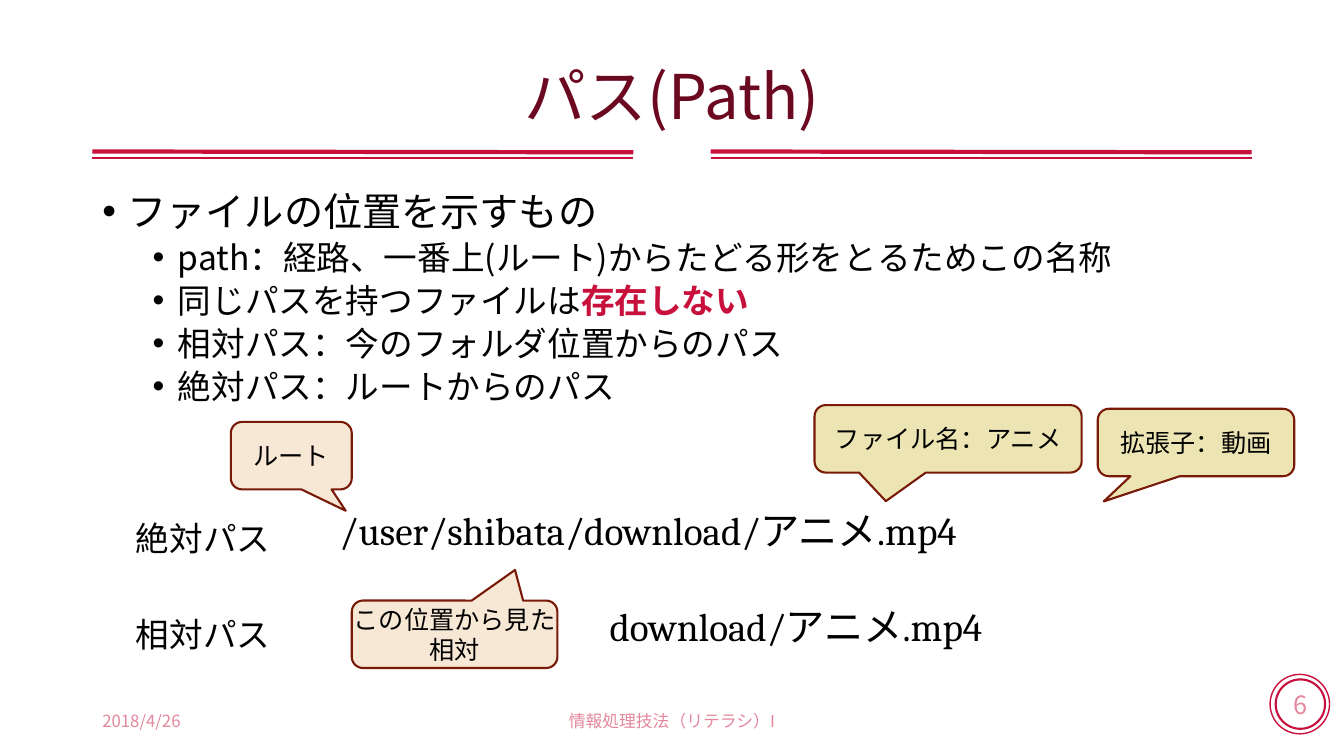
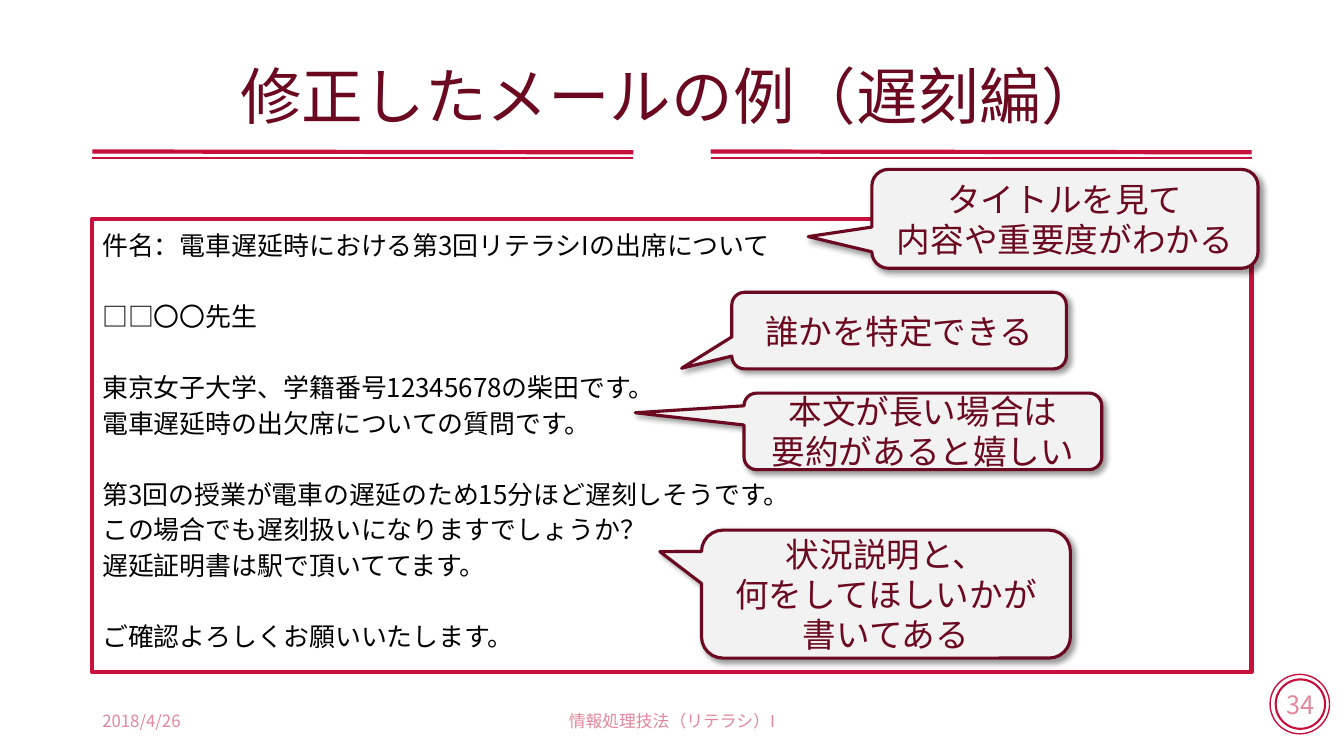
from collections import namedtuple

from lxml.etree import SubElement
from pptx import Presentation
from pptx.dml.color import RGBColor
from pptx.enum.shapes import MSO_CONNECTOR, MSO_SHAPE
from pptx.enum.text import MSO_ANCHOR, PP_ALIGN
from pptx.oxml.ns import qn
from pptx.util import Pt

CRIMSON = RGBColor(0xC8, 0x10, 0x3D)
WINE = RGBColor(0x6B, 0x09, 0x20)
BROWN = RGBColor(0x78, 0x1A, 0x07)
SAND = RGBColor(0xEC, 0xE5, 0xB3)
PEACH = RGBColor(0xF7, 0xE7, 0xD5)
PALE = RGBColor(0xF2, 0xF2, 0xF2)
BLACK = RGBColor(0, 0, 0)

SANS = "Noto Sans CJK JP"
SERIF = "Cambria"

Box = namedtuple("Box", "left top width height")
Style = namedtuple("Style", "size color font alpha", defaults=(SANS, None))
CalloutStyle = namedtuple("CalloutStyle", "fill line weight text wrap shadow")

TITLE_STYLE = Style(44, WINE)
FOOTER_STYLE = Style(12, CRIMSON, alpha=50)
NUMBER_STYLE = Style(18, CRIMSON, alpha=50)
LABEL_STYLE = Style(24, BLACK)
PATH_STYLE = Style(28, BLACK, SERIF)
MAIL_STYLE = Style(18.5, BLACK)
NOTE_TEXT = Style(18, BLACK, SERIF)

FILE_NOTE = CalloutStyle(SAND, BROWN, 1.5, NOTE_TEXT, False, False)
FOLDER_NOTE = CalloutStyle(PEACH, BROWN, 1.5, NOTE_TEXT, False, False)
MAIL_NOTE = CalloutStyle(PALE, WINE, 2.25, Style(24, WINE), True, True)

PAGE = Box(0, 0, 960, 540)
CONTENT = Box(66, 132, 828, 355)
LEADING = 1.19


def points(box):
    return [Pt(value) for value in box]


def inside(region, left, top, width, height):
    """Turn a box measured from the region's corner into a page box."""
    return Box(region.left + left, region.top + top, width, height)


def add_run(para, text, style, bold=False):
    span = para.add_run()
    span.text = text
    font = span.font
    font.size, font.name, font.bold = Pt(style.size), style.font, bold
    font.color.rgb = style.color
    properties = span.font._element
    east_asian = SubElement(properties, qn("a:ea"))
    east_asian.set("typeface", SANS)
    if style.alpha:
        color = properties.find(".//" + qn("a:srgbClr"))
        SubElement(color, qn("a:alpha")).set("val", str(style.alpha * 1000))


def paragraphs(frame, count):
    return [frame.paragraphs[0]] + [frame.add_paragraph() for _ in range(count - 1)]


def write_lines(frame, lines, style, align=PP_ALIGN.LEFT, wrap=True):
    frame.word_wrap = wrap
    frame.vertical_anchor = MSO_ANCHOR.MIDDLE
    for para, line in zip(paragraphs(frame, len(lines)), lines):
        para.alignment = align
        if len(lines) > 1:
            para.line_spacing = Pt(round(style.size * LEADING, 1))
        add_run(para, line, style)


def add_label(page, box, text, style, align=PP_ALIGN.LEFT):
    label = page.shapes.add_textbox(*points(box))
    write_lines(label.text_frame, [text], style, align)
    return label


def add_panel(page, kind, box, line, weight, fill=None):
    panel = page.shapes.add_shape(kind, *points(box))
    panel.shadow.inherit = False
    if fill is None:
        panel.fill.background()
    else:
        panel.fill.solid()
        panel.fill.fore_color.rgb = fill
    panel.line.color.rgb = line
    panel.line.width = Pt(weight)
    return panel


def add_shadow(shape):
    effects = shape._element.spPr.find(qn("a:effectLst"))
    shadow = SubElement(effects, qn("a:outerShdw"))
    for name, value in (("blurRad", Pt(4)), ("dist", Pt(3)), ("dir", 45 * 60000)):
        shadow.set(name, str(int(value)))
    shadow.set("algn", "tl")
    shadow.set("rotWithShape", "0")
    color = SubElement(shadow, qn("a:srgbClr"))
    color.set("val", str(BLACK))
    SubElement(color, qn("a:alpha")).set("val", "40000")


def add_callout(page, box, lines, tip, look):
    """Add a speech bubble; tip is its point as shares of the size from the centre."""
    bubble = add_panel(page, MSO_SHAPE.ROUNDED_RECTANGULAR_CALLOUT, box,
                       look.line, look.weight, look.fill)
    for index, value in enumerate((*tip, 0.167)):
        bubble.adjustments[index] = value
    if look.shadow:
        add_shadow(bubble)
    write_lines(bubble.text_frame, lines, look.text, PP_ALIGN.CENTER, look.wrap)


def add_rule(page, left, top, width, drop, weight):
    rule = page.shapes.add_connector(
        MSO_CONNECTOR.STRAIGHT, Pt(left), Pt(top), Pt(left + width), Pt(top + drop))
    rule.line.color.rgb = CRIMSON
    rule.line.width = Pt(weight)
    SubElement(rule._element.spPr, qn("a:effectLst"))


def add_title(page, box, text):
    width = 386.4
    for left in (box.left, box.left + box.width - width):
        add_rule(page, left, box.top + 79.4, width, 0.6, 3)
        add_rule(page, left, box.top + 84.2, width, 0, 1)
    title = add_label(page, box, text, TITLE_STYLE, PP_ALIGN.CENTER)
    title.text_frame.paragraphs[0].line_spacing = 0.9


def add_footer(page, box, number):
    add_label(page, inside(box, 0, 18.7, 216, 28.8), "2018/4/26", FOOTER_STYLE)
    add_label(page, inside(box, 252, 18.7, 324, 28.8), "情報処理技法（リテラシ）I",
              FOOTER_STYLE, PP_ALIGN.CENTER)
    add_panel(page, MSO_SHAPE.OVAL, inside(box, 841.2, 0, 42.5, 42.5), CRIMSON, 1)
    badge = add_panel(page, MSO_SHAPE.OVAL, inside(box, 845.2, 3.6, 35.3, 35.3),
                      CRIMSON, 1.5)
    write_lines(badge.text_frame, [str(number)], NUMBER_STYLE, PP_ALIGN.CENTER, False)


def add_page(deck, title, number):
    page = deck.slides.add_slide(deck.slide_layouts[6])
    add_title(page, Box(66, 28.8, 828, 84.2), title)
    add_footer(page, Box(66, 481.7, 894, 50), number)
    return page


def add_bullets(page, box, items):
    """Add bullets from (level, spans) pairs, each span being (text, stressed)."""
    frame = page.shapes.add_textbox(*points(box)).text_frame
    frame.word_wrap = True
    for index, (para, (level, spans)) in enumerate(
            zip(paragraphs(frame, len(items)), items)):
        size, margin, leading = ((28, 18, 32), (24, 54, 25.7))[level]
        para.level = level
        properties = para._p.get_or_add_pPr()
        properties.set("marL", str(Pt(margin)))
        properties.set("indent", str(-Pt(18)))
        SubElement(properties, qn("a:buFont")).set("typeface", "Arial")
        SubElement(properties, qn("a:buChar")).set("char", "•")
        para.line_spacing = Pt(leading)
        if index:
            para.space_before = Pt(5)
        for text, stressed in spans:
            add_run(para, text, Style(size, CRIMSON if stressed else BLACK), stressed)


def add_path_diagram(page, box):
    for top, text in ((76.6, "絶対パス"), (145.7, "相対パス")):
        add_label(page, inside(box, 0, top, 120, 36), text, LABEL_STYLE)
    for left, top, width, text in (
            (145.4, 68.6, 499, "/user/shibata/download/アニメ.mp4"),
            (338.4, 137, 312, "download/アニメ.mp4")):
        add_label(page, inside(box, left, top, width, 41), text, PATH_STYLE)
    for left, top, width, lines, tip, look in (
            (491.8, 0, 190.8, ["ファイル名：アニメ"], (-0.233, 0.924), FILE_NOTE),
            (694.1, 2.6, 140.4, ["拡張子：動画"], (-0.469, 0.873), FILE_NOTE),
            (74.9, 12, 86.4, ["ルート"], (0.45, 0.817), FOLDER_NOTE),
            (161.3, 139.6, 146.9, ["この位置から見た", "相対"],
             (0.294, -0.954), FOLDER_NOTE)):
        add_callout(page, inside(box, left, top, width, 48.2), lines, tip, look)


def add_mail(page, box, blocks):
    """Add a framed mail whose blocks of lines stand one line apart."""
    frame = add_panel(page, MSO_SHAPE.RECTANGLE, box, CRIMSON, 3).text_frame
    lines = [(line, index == 0) for block in blocks for index, line in enumerate(block)]
    write_lines(frame, [line for line, _ in lines], MAIL_STYLE)
    leading, gap = 15.4, 10
    for index, (para, (_, opens_block)) in enumerate(zip(frame.paragraphs, lines)):
        para.line_spacing = Pt(leading)
        if index:
            para.space_before = Pt(gap + (leading + gap) * opens_block)


def add_mail_notes(page, box):
    for left, top, width, height, lines, tip in (
            (556.8, 0, 275.8, 70.6, ["タイトルを見て", "内容や重要度がわかる"],
             (-0.665, 0.18)),
            (456.7, 87.8, 239, 54.7, ["誰かを特定できる"], (-0.65, 0.492)),
            (465.4, 159.8, 255.6, 54.7, ["本文が長い場合は", "要約があると嬉しい"],
             (-0.804, -0.243)),
            (435.1, 257.7, 263.5, 91.4,
             ["状況説明と、", "何をしてほしいかが", "書いてある"],
             (-0.613, -0.332))):
        add_callout(page, inside(box, left, top, width, height), lines, tip, MAIL_NOTE)


def build_path_page(deck):
    page = add_page(deck, "パス(Path)", 6)
    add_bullets(page, CONTENT, [
        (0, [("ファイルの位置を示すもの", False)]),
        (1, [("path：経路、一番上(ルート)からたどる形をとるためこの名称", False)]),
        (1, [("同じパスを持つファイルは", False), ("存在しない", True)]),
        (1, [("相対パス：今のフォルダ位置からのパス", False)]),
        (1, [("絶対パス：ルートからのパス", False)]),
    ])
    add_path_diagram(page, Box(90, 289.4, 840, 190))


def build_mail_page(deck):
    page = add_page(deck, "修正したメールの例（遅刻編）", 34)
    add_mail(page, Box(66, 156.2, 828, 324), [
        ["件名：電車遅延時における第3回リテラシIの出席について"],
        ["□□〇〇先生"],
        ["東京女子大学、学籍番号12345678の柴田です。",
         "電車遅延時の出欠席についての質問です。"],
        ["第3回の授業が電車の遅延のため15分ほど遅刻しそうです。",
         "この場合でも遅刻扱いになりますでしょうか？",
         "遅延証明書は駅で頂いててます。"],
        ["ご確認よろしくお願いいたします。"],
    ])
    add_mail_notes(page, Box(66, 121, 833, 350))


def main():
    deck = Presentation()
    deck.slide_width, deck.slide_height = Pt(PAGE.width), Pt(PAGE.height)
    build_path_page(deck)
    build_mail_page(deck)
    deck.save("out.pptx")


if __name__ == "__main__":
    main()
